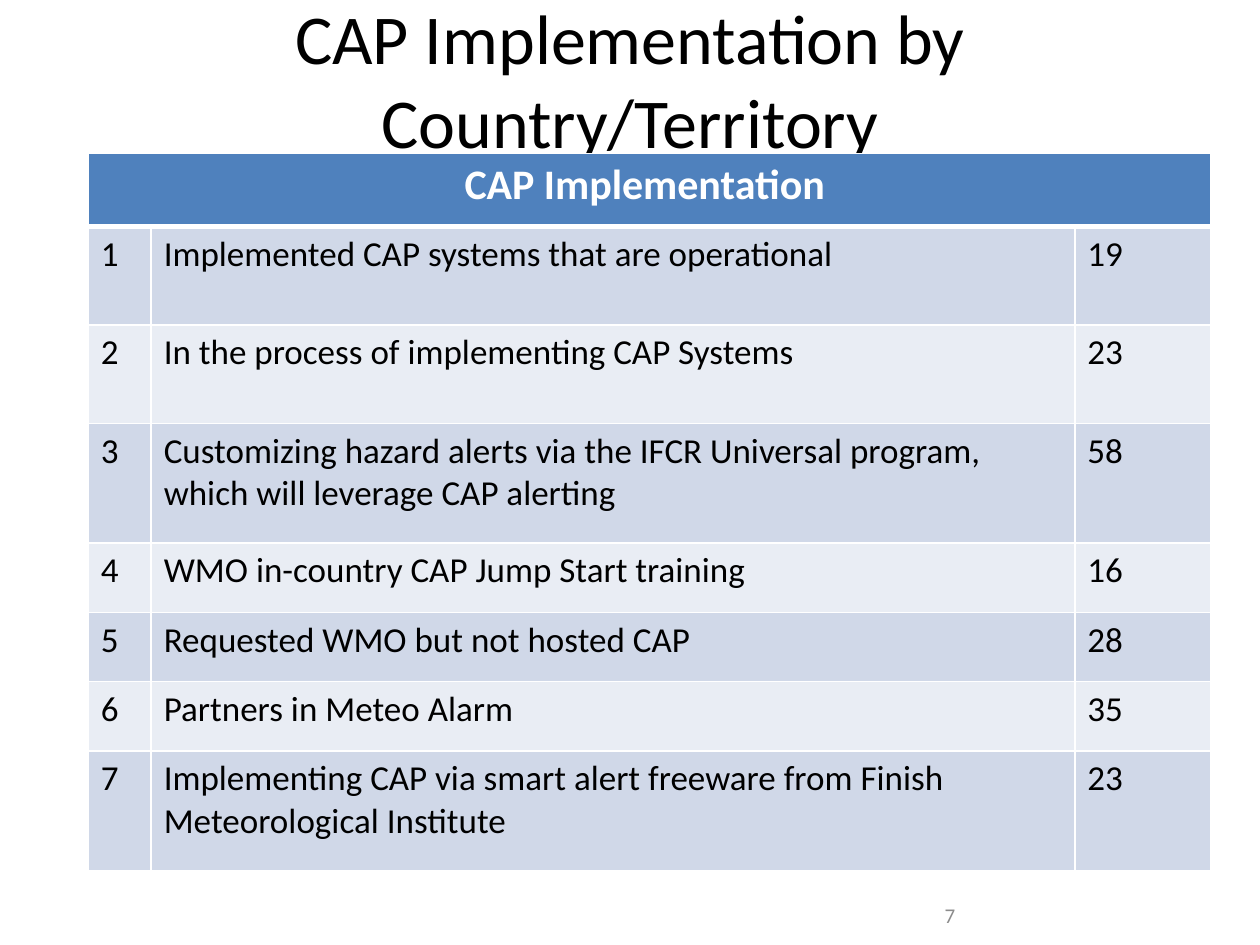
from lxml import etree
from pptx import Presentation
from pptx.dml.color import RGBColor
from pptx.enum.text import MSO_ANCHOR, PP_ALIGN
from pptx.oxml.ns import qn
from pptx.util import Inches, Pt

COLORS = {
    "text": "000000",
    "number": "8C8C8C",
    "header": "4F81BD",
    "odd": "D0D8E8",
    "even": "E9EDF4",
    "white": "FFFFFF",
}
HEADING = "CAP Implementation "
ITEMS = [
    ("Implemented CAP systems that are operational", 19, 0.78),
    ("In the process of implementing CAP Systems", 23, 0.78),
    ("Customizing hazard alerts via the IFCR Universal program, "
     "which will leverage CAP alerting", 58, 0.95),
    ("WMO in-country CAP Jump Start training", 16, 0.55),
    ("Requested WMO but not hosted CAP", 28, 0.55),
    ("Partners in Meteo Alarm", 35, 0.55),
    ("Implementing CAP via smart alert freeware from Finish "
     "Meteorological Institute", 23, 0.95),
]
COLUMN_WIDTHS = [0.5, 7.33, 1.08]
HEADER_HEIGHT = 0.58


def write_text(frame, text, size, color, align, bold=False):
    frame.text = text
    frame.word_wrap = True
    para = frame.paragraphs[0]
    para.alignment = align
    for span in para.runs:
        span.font.name = "Calibri"
        span.font.size = Pt(size)
        span.font.bold = bold
        span.font.color.rgb = RGBColor.from_string(COLORS[color])


def style_cell(cell, fill, bottom_width):
    cell.fill.solid()
    cell.fill.fore_color.rgb = RGBColor.from_string(COLORS[fill])
    properties = cell._tc.get_or_add_tcPr()
    for index, side in enumerate("LRTB"):
        width = bottom_width if side == "B" else 1
        line = etree.Element(qn(f"a:ln{side}"), w=str(Pt(width)))
        solid = etree.SubElement(line, qn("a:solidFill"))
        etree.SubElement(solid, qn("a:srgbClr"), val=COLORS["white"])
        properties.insert(index, line)


deck = Presentation()
deck.slide_width = Inches(10)
deck.slide_height = Inches(7.5)
page = deck.slides.add_slide(deck.slide_layouts[6])

title_box = page.shapes.add_textbox(Inches(0.5), Inches(0.3), Inches(9), Inches(1.25))
title_frame = title_box.text_frame
write_text(title_frame, "CAP Implementation by Country/Territory", 40, "text", PP_ALIGN.CENTER)
title_frame.vertical_anchor = MSO_ANCHOR.MIDDLE
title_frame.margin_bottom = Inches(0.65)

number_box = page.shapes.add_textbox(Inches(6.42), Inches(7.09), Inches(1.26), Inches(0.34))
write_text(number_box.text_frame, "7", 12, "number", PP_ALIGN.RIGHT)
number_box.text_frame.vertical_anchor = MSO_ANCHOR.MIDDLE

row_heights = [HEADER_HEIGHT] + [height for _, _, height in ITEMS]
table = page.shapes.add_table(
    len(row_heights), len(COLUMN_WIDTHS), Inches(0.7), Inches(1.22),
    Inches(sum(COLUMN_WIDTHS)), Inches(sum(row_heights)),
).table
for column, width in zip(table.columns, COLUMN_WIDTHS):
    column.width = Inches(width)
for row, height in zip(table.rows, row_heights):
    row.height = Inches(height)

for cell in table.rows[0].cells:
    style_cell(cell, "header", 3)
header_cell = table.cell(0, 0)
header_cell.merge(table.cell(0, 2))
write_text(header_cell.text_frame, HEADING, 24, "white", PP_ALIGN.CENTER, bold=True)

for number, (label, count, _) in enumerate(ITEMS, start=1):
    fill = "odd" if number % 2 else "even"
    for cell, value in zip(table.rows[number].cells, (number, label, count)):
        write_text(cell.text_frame, str(value), 20, "text", PP_ALIGN.LEFT)
        style_cell(cell, fill, 1)

deck.save("out.pptx")
